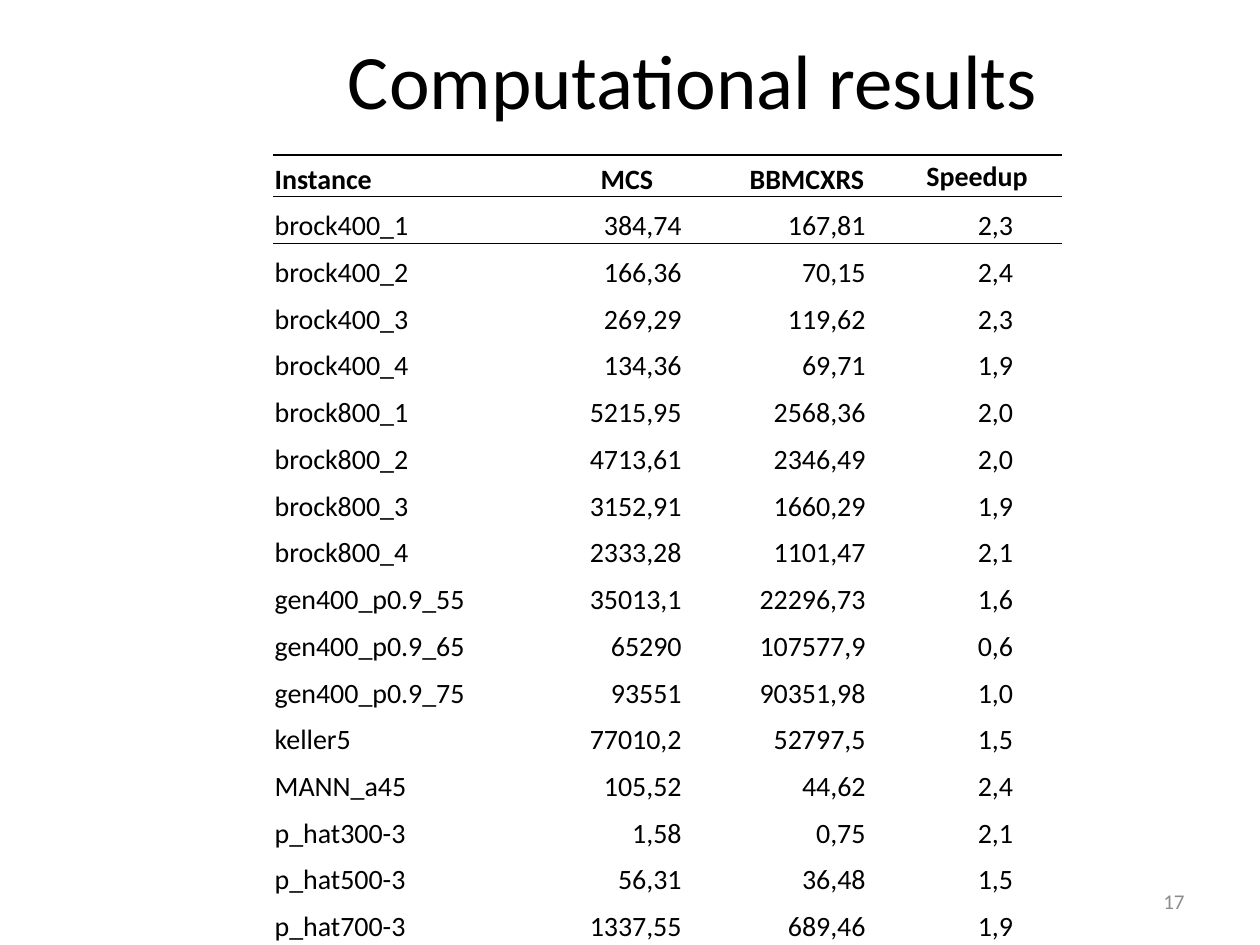
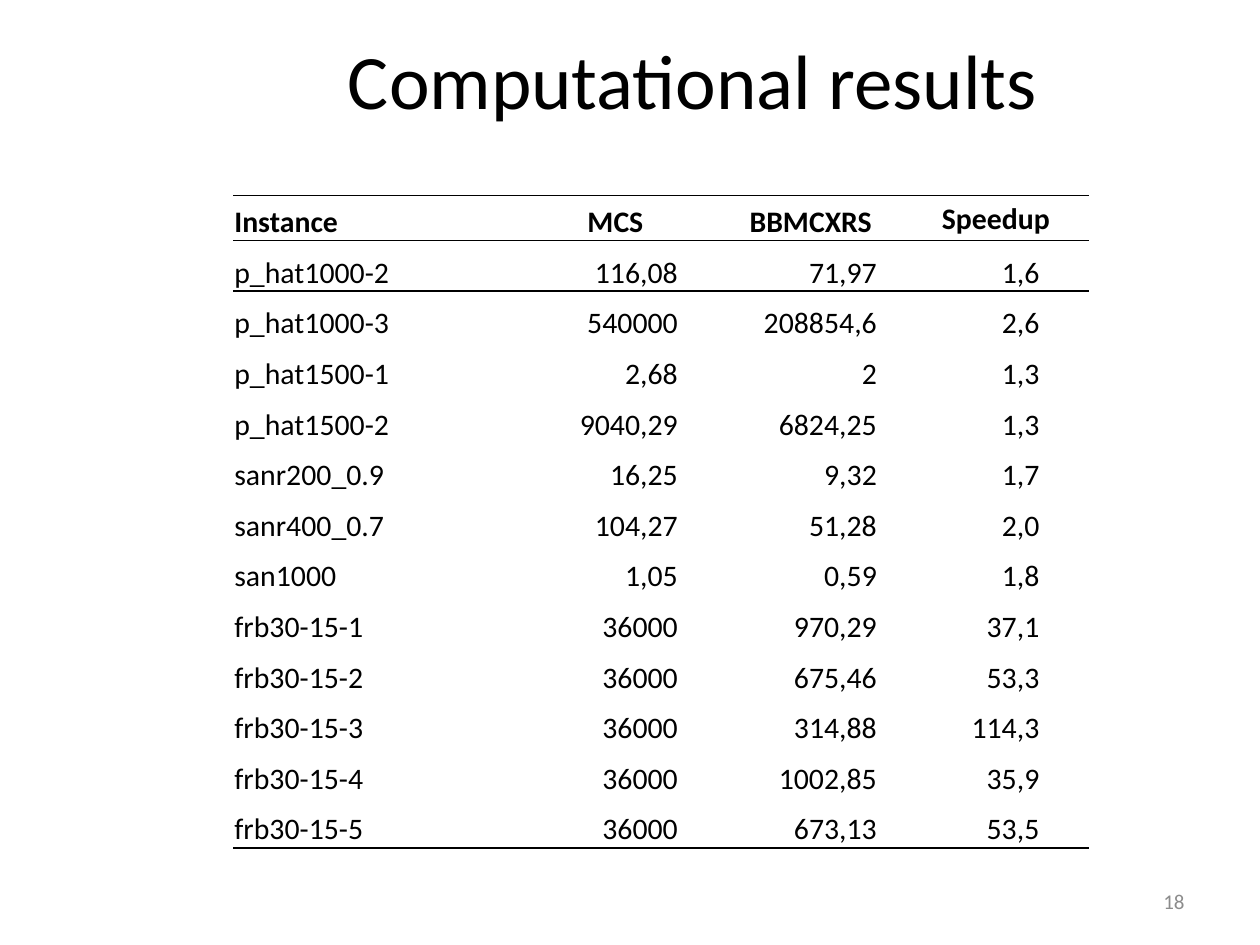
from pptx import Presentation
from pptx.dml.color import RGBColor
from pptx.enum.text import MSO_ANCHOR, PP_ALIGN
from pptx.oxml import parse_xml
from pptx.oxml.ns import nsdecls, qn
from pptx.util import Inches, Pt

FONT = "Calibri"
BLACK, GREY = "000000", "8C8C8C"
PLAIN = "{2D5ABB26-0587-4C30-8999-92F81FD0307C}"  # no style, no grid
HEAD = ["Instance", "MCS", "BBMCXRS", "Speedup"]
PADS = [0.01, 0.32, 0.21, 0.39]  # right margin of the body cells, by column

FIRST = """brock400_1 384,74 167,81 2,3
brock400_2 166,36 70,15 2,4
brock400_3 269,29 119,62 2,3
brock400_4 134,36 69,71 1,9
brock800_1 5215,95 2568,36 2,0
brock800_2 4713,61 2346,49 2,0
brock800_3 3152,91 1660,29 1,9
brock800_4 2333,28 1101,47 2,1
gen400_p0.9_55 35013,1 22296,73 1,6
gen400_p0.9_65 65290 107577,9 0,6
gen400_p0.9_75 93551 90351,98 1,0
keller5 77010,2 52797,5 1,5
MANN_a45 105,52 44,62 2,4
p_hat300-3 1,58 0,75 2,1
p_hat500-3 56,31 36,48 1,5
p_hat700-3 1337,55 689,46 1,9"""

SECOND = """p_hat1000-2 116,08 71,97 1,6
p_hat1000-3 540000 208854,6 2,6
p_hat1500-1 2,68 2 1,3
p_hat1500-2 9040,29 6824,25 1,3
sanr200_0.9 16,25 9,32 1,7
sanr400_0.7 104,27 51,28 2,0
san1000 1,05 0,59 1,8
frb30-15-1 36000 970,29 37,1
frb30-15-2 36000 675,46 53,3
frb30-15-3 36000 314,88 114,3
frb30-15-4 36000 1002,85 35,9
frb30-15-5 36000 673,13 53,5"""

# number, records, table box, column widths, header height, text size, closing rule
PAGES = [
    ("17", FIRST, (2.17, 1.23, 6.27, 6.27), (2.05, 1.51, 1.35, 1.35), 0.33, 16, False),
    ("18", SECOND, (1.85, 1.55, 6.79, 5.18), (2.22, 1.63, 1.47, 1.47), 0.36, 17, True),
]


def write(frame, text, size, align, color=BLACK, bold=False):
    """Add one run to the first paragraph of frame and return the paragraph."""
    para = frame.paragraphs[0]
    para.alignment = align
    run = para.add_run()
    run.text = text
    run.font.name = FONT
    run.font.size = Pt(size)
    run.font.bold = bold
    run.font.color.rgb = RGBColor.from_string(color)
    return para


def rule(cell, side):
    """Draw a black line on one side of a cell: T or B."""
    cell._tc.get_or_add_tcPr().append(parse_xml(
        f'<a:ln{side} {nsdecls("a")} w="{Pt(1)}"><a:solidFill>'
        f'<a:srgbClr val="{BLACK}"/></a:solidFill></a:ln{side}>'))


deck = Presentation()
deck.slide_width, deck.slide_height = Inches(10), Inches(7.5)

for number, data, area, widths, top, size, closed in PAGES:
    slide = deck.slides.add_slide(deck.slide_layouts[6])

    for text, box, pt, align, color in [
        ("Computational results", (1, 0, 9, 1.25), 44, PP_ALIGN.CENTER, BLACK),
        (number, (7.17, 6.95, 2.33, 0.4), 12, PP_ALIGN.RIGHT, GREY),
    ]:
        frame = slide.shapes.add_textbox(*map(Inches, box)).text_frame
        frame.word_wrap = True
        frame.vertical_anchor = MSO_ANCHOR.MIDDLE
        write(frame, text, pt, align, color)

    rows = [HEAD] + [line.split() for line in data.splitlines()]
    last = len(rows) - 1
    table = slide.shapes.add_table(len(rows), len(HEAD), *map(Inches, area)).table
    table.horz_banding = False
    table._tbl.tblPr.find(qn("a:tableStyleId")).text = PLAIN
    for col, width in zip(table.columns, widths):
        col.width = Inches(width)

    for r, row in enumerate(rows):
        head = r == 0
        table.rows[r].height = Inches(top if head else (area[3] - top) / last)
        for c, text in enumerate(row):
            cell = table.cell(r, c)
            edge = 0 if c == 3 else 0.01
            cell.margin_left = cell.margin_top = Inches(edge)
            cell.margin_right = Inches(edge if head else PADS[c])
            cell.margin_bottom = 0
            cell.vertical_anchor = MSO_ANCHOR.TOP if head and c == 3 else MSO_ANCHOR.BOTTOM
            if head:
                rule(cell, "T")
            if r == 1:
                rule(cell, "T")
            if head or (closed and r == last):
                rule(cell, "B")
            cell.fill.background()
            if c == 0:
                align = PP_ALIGN.LEFT
            else:
                align = PP_ALIGN.CENTER if head else PP_ALIGN.RIGHT
            para = write(cell.text_frame, text, size, align, bold=head)
            para.line_spacing = 1.15
            para.space_after = Pt(10)

deck.save("out.pptx")
